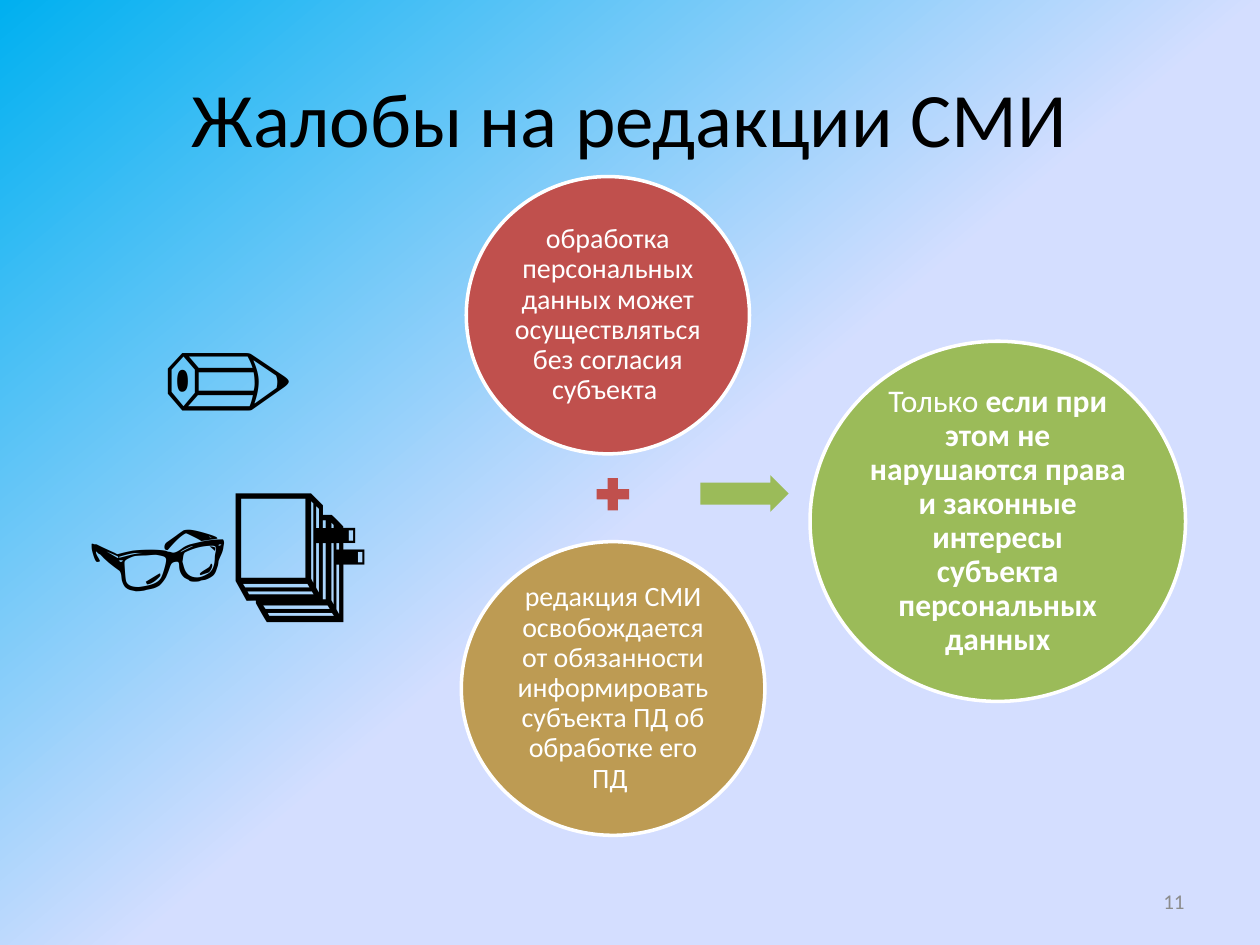
import copy

import pptx
import pptx.dml.color
import pptx.enum.shapes
import pptx.enum.text
import pptx.oxml.ns
import pptx.oxml.xmlchemy
import pptx.util

FONT = "Calibri"
BLACK, WHITE, GREY = "000000", "FFFFFF", "8C8C8C"
RED, TAN, GREEN = "C0504D", "BD9B53", "9BBB59"
SKY, LAVENDER = "00B0F0", "D4DEFF"

Cm = pptx.util.Cm
Shapes = pptx.enum.shapes.MSO_SHAPE
Align = pptx.enum.text.PP_ALIGN
Anchor = pptx.enum.text.MSO_ANCHOR


def color(hex_string):
    return pptx.dml.color.RGBColor.from_string(hex_string)


def place(shape, left, top, width, height):
    shape.left, shape.top = Cm(left), Cm(top)
    shape.width, shape.height = Cm(width), Cm(height)


def paint_background(slide):
    """Blend sky blue into lavender, which then stays flat to the far corner."""
    fill = slide.background.fill
    fill.gradient()
    fill.gradient_angle = 310
    for stop, position, shade in zip(fill.gradient_stops, (0, 0.53), (SKY, LAVENDER)):
        stop.position = position
        stop.color.rgb = color(shade)
    stops = slide.element.find(".//" + pptx.oxml.ns.qn("a:gsLst"))
    last = copy.deepcopy(stops[-1])
    last.set("pos", "100000")
    stops.append(last)


def write(frame, runs, size, shade, align=Align.CENTER, anchor=Anchor.MIDDLE):
    """Fill the frame with one paragraph made of (text, bold) runs."""
    frame.word_wrap = True
    frame.auto_size = pptx.enum.text.MSO_AUTO_SIZE.NONE
    frame.vertical_anchor = anchor
    para = frame.paragraphs[0]
    para.alignment = align
    para.font.name = FONT
    para.font.size = pptx.util.Pt(size)
    para.font.color.rgb = color(shade)
    for text, bold in runs:
        span = para.add_run()
        span.text = text
        if bold:
            span.font.bold = True
    return para


def remove_bullet(para):
    properties = para._p.get_or_add_pPr()
    properties.set("marL", "0")
    properties.set("indent", "0")
    properties.insert_element_before(
        pptx.oxml.xmlchemy.OxmlElement("a:buNone"), "a:tabLst", "a:defRPr", "a:extLst")


def add_figure(slide, kind, bounds, shade):
    figure = slide.shapes.add_shape(kind, *map(Cm, bounds))
    figure.shadow.inherit = False
    figure.fill.solid()
    figure.fill.fore_color.rgb = color(shade)
    figure.line.fill.background()
    return figure


def add_circle(slide, bounds, shade, runs, size, inset):
    circle = add_figure(slide, Shapes.OVAL, bounds, shade)
    circle.line.color.rgb = color(WHITE)
    circle.line.width = pptx.util.Pt(2)
    frame = circle.text_frame
    frame.margin_left = frame.margin_right = Cm(inset)
    frame.margin_top = frame.margin_bottom = Cm(inset)
    write(frame, runs, size, WHITE).line_spacing = 0.9


def main():
    deck = pptx.Presentation()
    deck.slide_width, deck.slide_height = Cm(25.4), Cm(19.05)
    slide = deck.slides.add_slide(deck.slide_layouts[1])
    paint_background(slide)

    title = slide.shapes.title
    place(title, 1.27, 0.76, 22.86, 3.18)
    write(title.text_frame, [("Жалобы на редакции СМИ", False)], 44, BLACK)

    symbols = slide.placeholders[1]
    place(symbols, 0.89, 5.72, 7.44, 8.48)
    remove_bullet(write(symbols.text_frame, [("✏👓📑", False)], 80, BLACK,
                        anchor=Anchor.TOP))

    add_circle(slide, (9.4, 3.56, 5.71, 5.59), RED, [
        ("обработка персональных данных может осуществляться без согласия субъекта ", False),
    ], 16, 0.05)
    add_figure(slide, Shapes.MATH_PLUS, (11.91, 9.52, 0.89, 0.89), RED)
    add_circle(slide, (9.3, 10.92, 6.12, 5.92), TAN, [
        ("редакция СМИ освобождается от обязанности информировать "
         "субъекта ПД об обработке его ПД ", False),
    ], 16, 0.05)
    arrow = add_figure(slide, Shapes.RIGHT_ARROW, (14.12, 9.58, 1.78, 0.74), GREEN)
    arrow.adjustments[0] = 0.6
    add_circle(slide, (16.33, 6.88, 7.57, 7.26), GREEN, [
        ("Только ", False),
        ("если при этом не нарушаются права и законные интересы "
         "субъекта персональных данных", True),
    ], 18, 0.07)

    number = slide.shapes.add_textbox(Cm(18.21), Cm(17.65), Cm(5.92), Cm(1.02))
    write(number.text_frame, [("11", False)], 12, GREY, align=Align.RIGHT)

    deck.save("out.pptx")


if __name__ == "__main__":
    main()
